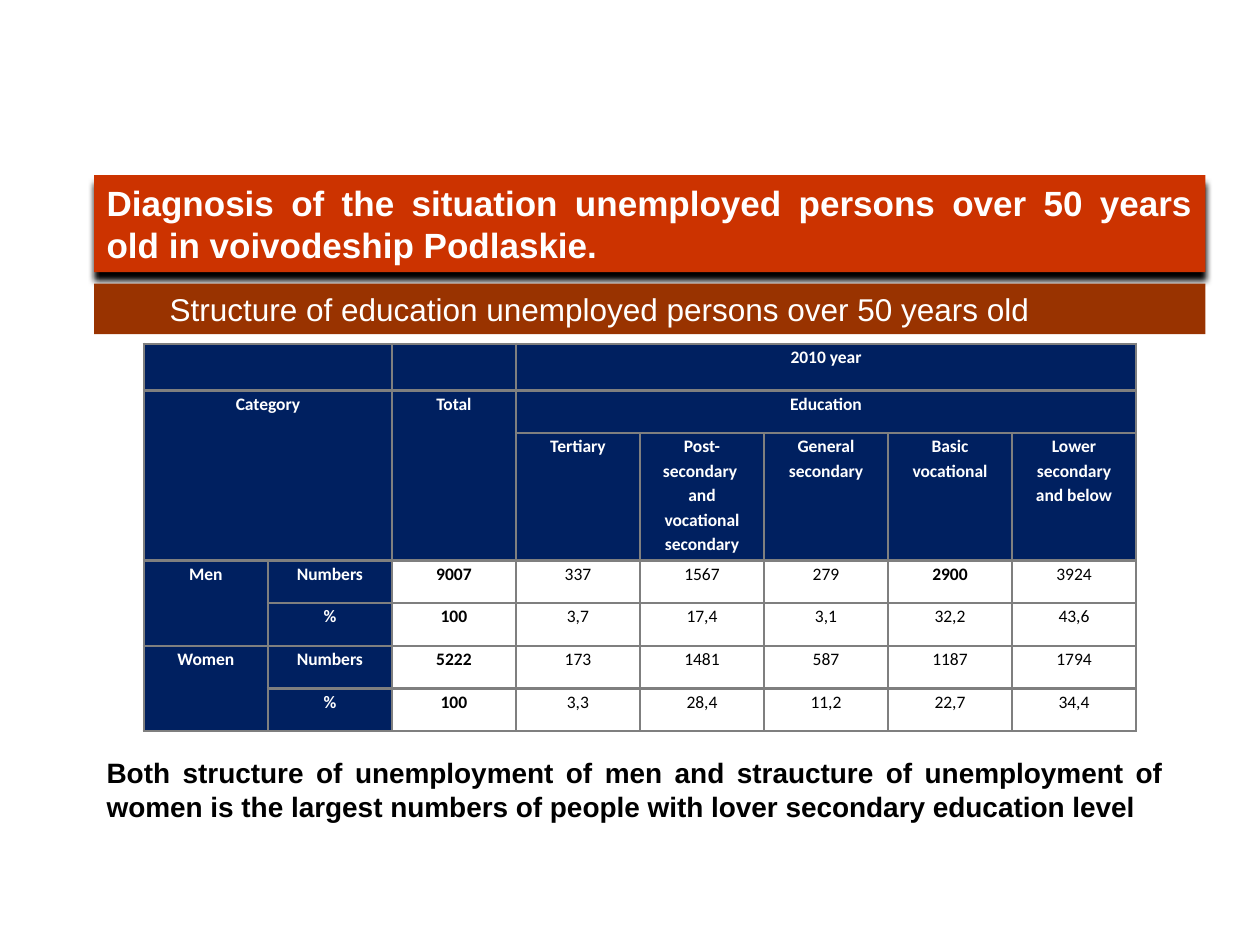
from lxml import etree
from pptx import Presentation
from pptx.dml.color import RGBColor
from pptx.enum.shapes import MSO_SHAPE
from pptx.enum.text import MSO_ANCHOR, PP_ALIGN
from pptx.oxml import parse_xml
from pptx.oxml.ns import nsdecls, qn
from pptx.util import Cm, Pt

RECTANGLE = MSO_SHAPE.RECTANGLE
TOP = MSO_ANCHOR.TOP
CENTER, JUSTIFY = PP_ALIGN.CENTER, PP_ALIGN.JUSTIFY

WHITE = RGBColor(0xFF, 0xFF, 0xFF)
BLACK = RGBColor(0, 0, 0)
ORANGE = RGBColor(0xCC, 0x33, 0x00)
BROWN = RGBColor(0x99, 0x33, 0x00)
NAVY = RGBColor(0x00, 0x20, 0x60)
GREY = RGBColor(0x7F, 0x7F, 0x7F)

COLUMN_WIDTH = Cm(2.5)
ROW_HEIGHTS = [Cm(h) for h in (0.94, 0.86, 2.57, 0.86, 0.86, 0.86, 0.86)]
HEADER_ROWS, LABEL_COLUMNS = 3, 2
TOTAL_COLUMN = 2
CELLS = [
    ["", "", "", "2010 year", "", "", "", ""],
    ["Category", "", "Total", "Education", "", "", "", ""],
    ["", "", "", "Tertiary", "Post-secondary  and vocational secondary",
     "General secondary", "Basic vocational", "Lower secondary and below"],
    ["Men", "Numbers", "9007", "337", "1567", "279", "2900", "3924"],
    ["", "%", "100", "3,7", "17,4", "3,1", "32,2", "43,6"],
    ["Women", "Numbers", "5222", "173", "1481", "587", "1187", "1794"],
    ["", "%", "100", "3,3", "28,4", "11,2", "22,7", "34,4"],
]
# First row, first column, last row, last column
MERGES = [(0, 0, 0, 1), (0, 3, 0, 7), (1, 0, 2, 1), (1, 2, 2, 2),
          (1, 3, 1, 7), (3, 0, 4, 0), (5, 0, 6, 0)]
HIGHLIGHT = (3, 6)


def write(frame, text, *, size, color, font="Arial", bold=False,
          align=JUSTIFY, line_spacing=None):
    frame.word_wrap = True
    paragraph = frame.paragraphs[0]
    paragraph.alignment = align
    paragraph.line_spacing = line_spacing
    run = paragraph.add_run()
    run.text = text
    run.font.name, run.font.size = font, Pt(size)
    run.font.bold = bold
    run.font.color.rgb = color


def add_shadow(shape):
    """Give the shape a black shadow that falls straight down."""
    shape._element.spPr.append(parse_xml(
        f'<a:effectLst {nsdecls("a")}><a:outerShdw blurRad="{Pt(4)}" '
        f'dist="{Pt(4)}" dir="5400000" algn="ctr" rotWithShape="0">'
        '<a:srgbClr val="000000"/></a:outerShdw></a:effectLst>'))


def add_banner(slide, box, text, fill, *, shadow=False, **text_format):
    banner = slide.shapes.add_shape(RECTANGLE, *box)
    banner.fill.solid()
    banner.fill.fore_color.rgb = fill
    banner.line.fill.background()
    if shadow:
        add_shadow(banner)
    else:
        banner.shadow.inherit = False
    banner.text_frame.vertical_anchor = TOP
    write(banner.text_frame, text, color=WHITE, **text_format)


def add_borders(cell):
    properties = cell._tc.get_or_add_tcPr()
    for side in ("a:lnL", "a:lnR", "a:lnT", "a:lnB"):
        line = etree.SubElement(properties, qn(side), w=str(Pt(1.5)))
        fill = etree.SubElement(line, qn("a:solidFill"))
        etree.SubElement(fill, qn("a:srgbClr"), val=str(GREY))


def add_education_table(slide, left, top):
    rows, columns = len(CELLS), len(CELLS[0])
    table = slide.shapes.add_table(rows, columns, left, top,
                                   COLUMN_WIDTH * columns,
                                   sum(ROW_HEIGHTS)).table
    table.first_row = table.horz_banding = False
    for column in table.columns:
        column.width = COLUMN_WIDTH
    for row, height in zip(table.rows, ROW_HEIGHTS):
        row.height = height
    for r, texts in enumerate(CELLS):
        for c, text in enumerate(texts):
            cell = table.cell(r, c)
            heading = r < HEADER_ROWS or c < LABEL_COLUMNS
            cell.margin_left = cell.margin_right = Cm(0.19)
            cell.margin_top = cell.margin_bottom = 0
            add_borders(cell)
            if heading:
                cell.fill.solid()
                cell.fill.fore_color.rgb = NAVY
            else:
                cell.fill.background()
            if text:
                write(cell.text_frame, text, size=10, font="Calibri",
                      color=WHITE if heading else BLACK,
                      bold=heading or c == TOTAL_COLUMN or (r, c) == HIGHLIGHT,
                      align=CENTER, line_spacing=1.15)
    for first_row, first_column, last_row, last_column in MERGES:
        table.cell(first_row, first_column).merge(
            table.cell(last_row, last_column))


def add_conclusion(slide, box, text):
    conclusion = slide.shapes.add_textbox(*box)
    write(conclusion.text_frame, text, size=16, color=BLACK, bold=True)


def main():
    presentation = Presentation()
    presentation.slide_width, presentation.slide_height = Cm(25.4), Cm(19.05)
    slide = presentation.slides.add_slide(presentation.slide_layouts[6])
    left, banner_width = Cm(1.9), Cm(22.4)
    add_banner(slide, (left, Cm(3.53), banner_width, Cm(1.96)),
               "Diagnosis of the situation unemployed persons over 50 years "
               "old in voivodeship Podlaskie.",
               ORANGE, shadow=True, size=20, bold=True)
    add_banner(slide, (left, Cm(5.72), banner_width, Cm(1.02)),
               "\tStructure of education unemployed persons over 50 years old",
               BROWN, size=18)
    add_education_table(slide, Cm(2.9), Cm(6.93))
    add_conclusion(slide, (left, Cm(15.11), Cm(21.8), Cm(1.63)),
                   "Both structure of unemployment of men and straucture of "
                   "unemployment of women is the largest numbers of people "
                   "with lover secondary education level")
    presentation.save("out.pptx")


if __name__ == "__main__":
    main()
